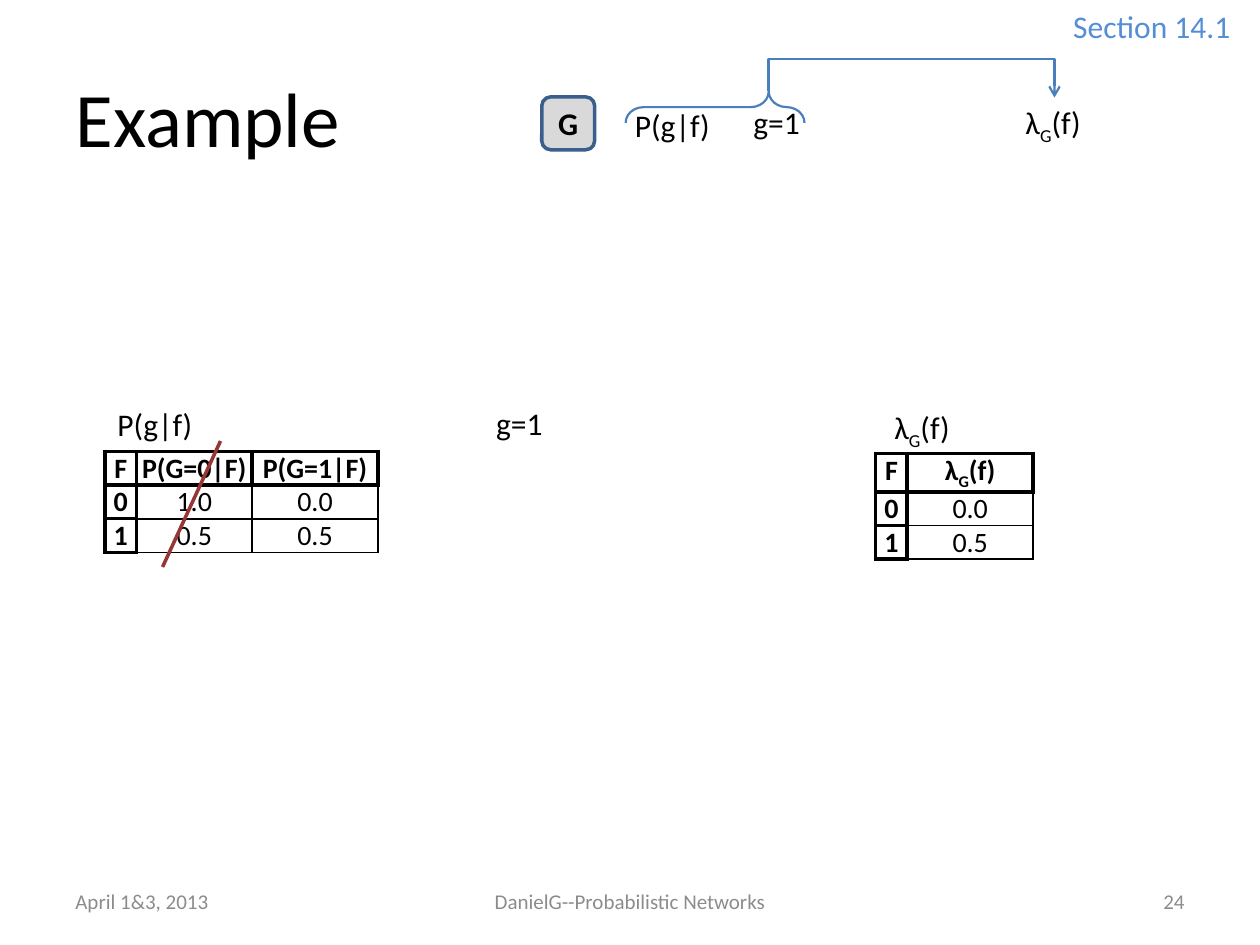
from lxml import etree
from pptx import Presentation
from pptx.dml.color import RGBColor
from pptx.enum.shapes import MSO_CONNECTOR, MSO_SHAPE
from pptx.enum.text import MSO_ANCHOR, PP_ALIGN
from pptx.oxml.ns import qn
from pptx.util import Pt

LEFT, CENTER, RIGHT = PP_ALIGN.LEFT, PP_ALIGN.CENTER, PP_ALIGN.RIGHT
TOP, MIDDLE = MSO_ANCHOR.TOP, MSO_ANCHOR.MIDDLE
STRAIGHT, ELBOW = MSO_CONNECTOR.STRAIGHT, MSO_CONNECTOR.ELBOW
ROUNDED, BRACE = MSO_SHAPE.ROUNDED_RECTANGLE, MSO_SHAPE.LEFT_BRACE

FONT = "Calibri"
COLORS = {
    "text": "000000", "footer": "8C8C8C", "section": "558ED5",
    "node": "D9D9D9", "node_line": "3A5F8C", "flow": "4B7EBC", "strike": "953735",
}
THICK, THIN = 2.25, 1

# Text between underscores is subscript.
TITLE = ("Example", (36, 21.6, 648, 90))
LABELS = [
    ("g=1", (423.4, 55.4, 66, 29)),
    ("P(g|f)", (355.7, 56.9, 66, 29)),
    ("λ_G_(f)", (578.9, 55.4, 48, 29)),
    ("P(g|f)", (60, 228, 66, 29)),
    ("g=1", (276.5, 227.5, 66, 29)),
    ("λ_G_(f)", (504, 229.7, 48, 29)),
]
SECTION = ("Section 14.1", (606.2, 0.7, 109.4, 29))
FOOTERS = [
    ("April 1&3, 2013", (36, 500.4, 168, 28.8), LEFT),
    ("DanielG--Probabilistic Networks", (246, 500.4, 228, 28.8), CENTER),
    ("24", (516, 500.4, 168, 28.8), RIGHT),
]
TABLES = [
    ((60, 258), (18, 66, 72), [
        ("F", "P(G=0|F)", "P(G=1|F)"), ("0", "1.0", "0.0"), ("1", "0.5", "0.5")]),
    ((500.4, 259.2), (18, 72), [("F", "λ_G_(f)"), ("0", "0.0"), ("1", "0.5")]),
]
ROW_HEIGHT = 15


def color(name):
    return RGBColor.from_string(COLORS[name])


def points(values):
    return [Pt(value) for value in values]


def write(frame, text, size=18, name="text", align=LEFT, anchor=TOP, bold=False, wrap=True):
    """Fill a text frame, lowering the parts between underscores."""
    frame.word_wrap = wrap
    frame.vertical_anchor = anchor
    paragraph = frame.paragraphs[0]
    paragraph.alignment = align
    for index, part in enumerate(text.split("_")):
        run = paragraph.add_run()
        run.text = part
        for key, value in {"name": FONT, "size": Pt(size), "bold": bold}.items():
            setattr(run.font, key, value)
        run.font.color.rgb = color(name)
        if index % 2:
            run.font._element.set("baseline", "-25000")


def add_label(slide, text, box, **style):
    write(slide.shapes.add_textbox(*points(box)).text_frame, text, **style)


def add_shape(slide, kind, box, line, width):
    shape = slide.shapes.add_shape(kind, *points(box))
    shape.shadow.inherit = False
    shape.fill.background()
    shape.line.color.rgb = color(line)
    shape.line.width = Pt(width)
    return shape


def add_line(slide, kind, ends, line, width):
    connector = slide.shapes.add_connector(kind, *points(ends))
    connector.line.color.rgb = color(line)
    connector.line.width = Pt(width)
    etree.SubElement(connector._element.spPr, qn("a:effectLst"))
    return connector


def set_border(cell, side, width):
    properties = cell._tc.get_or_add_tcPr()
    border = etree.SubElement(properties, qn(f"a:{side}"), w=str(Pt(width)))
    fill = etree.SubElement(border, qn("a:solidFill"))
    etree.SubElement(fill, qn("a:srgbClr"), val=COLORS["text"])


def add_table(slide, position, widths, rows):
    box = (*position, sum(widths), ROW_HEIGHT * len(rows))
    table = slide.shapes.add_table(len(rows), len(widths), *points(box)).table
    table.first_row = table.horz_banding = False
    for column, width in zip(table.columns, widths):
        column.width = Pt(width)
    for row_index, texts in enumerate(rows):
        table.rows[row_index].height = Pt(ROW_HEIGHT)
        for column_index, text in enumerate(texts):
            cell = table.cell(row_index, column_index)
            header = row_index == 0 or column_index == 0
            for side in ("left", "right", "top", "bottom"):
                setattr(cell, f"margin_{side}", 0)
            write(cell.text_frame, text, size=16, align=CENTER, bold=header)
            thick = {"lnL": header or column_index == 1, "lnR": header,
                     "lnT": header or row_index == 1, "lnB": header}
            for side, is_thick in thick.items():
                set_border(cell, side, THICK if is_thick else THIN)
            cell.fill.background()


def add_flow_arrow(slide):
    """Turn an elbow connector so that it rises from the brace and drops to the message."""
    rise, drop, span, center_x, center_y = 18, 4, 163.4, 520.9, 53.8
    left, top = center_x - drop / 2, center_y - span / 2
    arrow = add_line(slide, ELBOW, (left + drop, top, left, top + span), "flow", 1.25)
    properties = arrow._element.spPr
    properties.find(qn("a:xfrm")).set("rot", str(270 * 60000))
    guides = properties.find(qn("a:prstGeom")).find(qn("a:avLst"))
    etree.SubElement(guides, qn("a:gd"), name="adj1", fmla=f"val {-100000 * rise // drop}")
    etree.SubElement(properties.find(qn("a:ln")), qn("a:tailEnd"), type="arrow")


def main():
    presentation = Presentation()
    presentation.slide_width, presentation.slide_height = Pt(720), Pt(540)
    slide = presentation.slides.add_slide(presentation.slide_layouts[5])

    text, box = TITLE
    title = slide.shapes.title
    for key, value in zip(("left", "top", "width", "height"), points(box)):
        setattr(title, key, value)
    write(title.text_frame, text, size=44, anchor=MIDDLE)

    for text, box, align in FOOTERS:
        add_label(slide, text, box, size=12, name="footer", align=align, anchor=MIDDLE)
    for table in TABLES:
        add_table(slide, *table)

    node = add_shape(slide, ROUNDED, (309.6, 55.4, 30.2, 30.2), "node_line", 2)
    node.fill.solid()
    node.fill.fore_color.rgb = color("node")
    write(node.text_frame, "G", align=CENTER, anchor=MIDDLE, bold=True, wrap=False)

    for text, box in LABELS:
        add_label(slide, text, box)
    add_label(slide, *SECTION, name="section", wrap=False)

    brace = add_shape(slide, BRACE, (399.6, 10.1, 18, 102.2), "flow", 1.25)
    brace.rotation = 90
    brace.adjustments[0], brace.adjustments[1] = 0.58, 0.2
    add_flow_arrow(slide)
    add_line(slide, STRAIGHT, (92.9, 324, 126, 252), "strike", 2)
    presentation.save("out.pptx")


if __name__ == "__main__":
    main()
